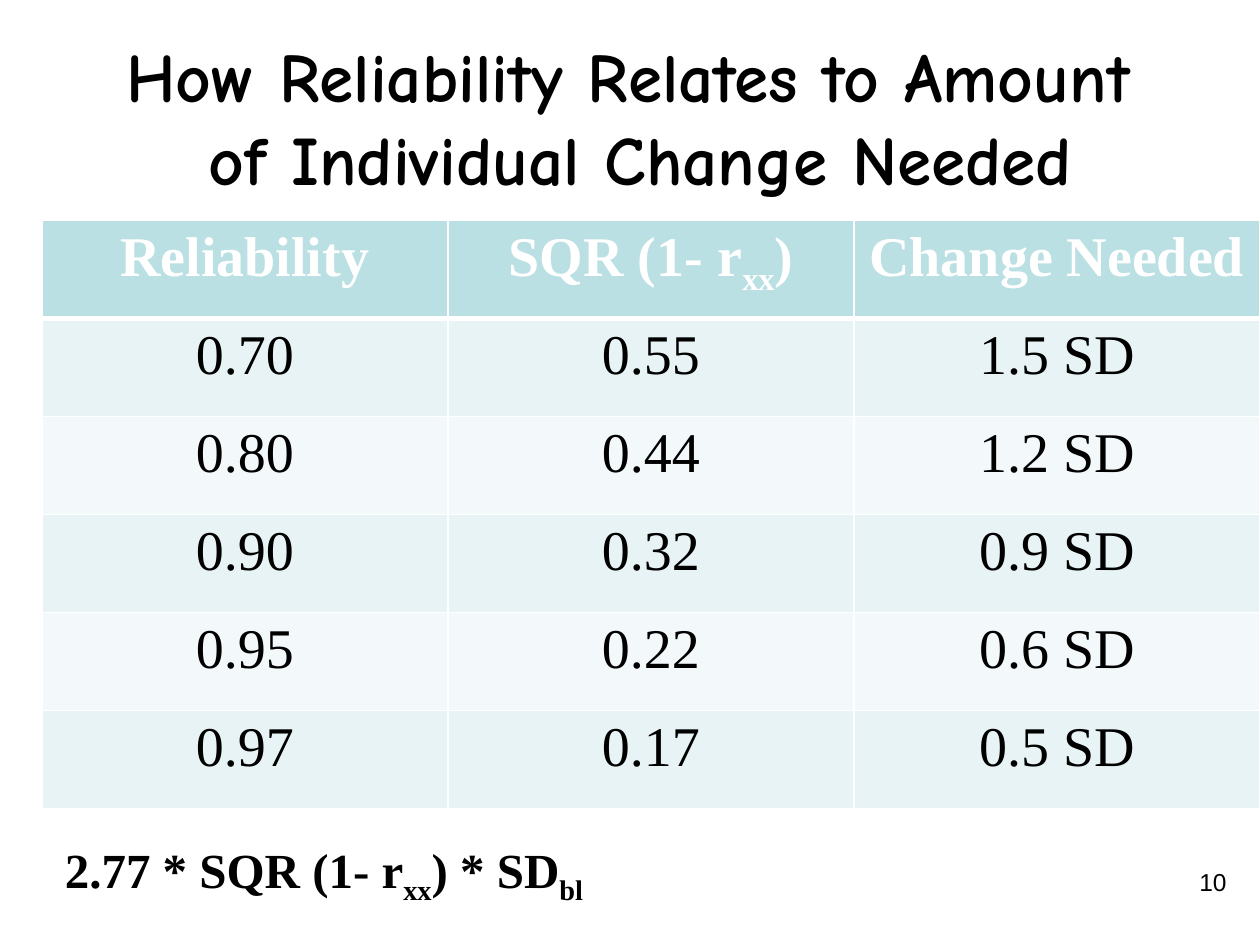
from lxml import etree
from pptx import Presentation
from pptx.dml.color import RGBColor
from pptx.enum.text import MSO_ANCHOR, MSO_AUTO_SIZE, PP_ALIGN
from pptx.oxml.ns import qn
from pptx.util import Pt

CENTER, RIGHT, LEFT = PP_ALIGN.CENTER, PP_ALIGN.RIGHT, PP_ALIGN.LEFT
MIDDLE = MSO_ANCHOR.MIDDLE
NO_FIT = MSO_AUTO_SIZE.NONE
COLORS = {
    "text": "000000",
    "white": "FFFFFF",
    "header": "BBE0E3",
    "odd": "E7F3F4",
    "even": "F3F9FA",
}
SERIF = "Times New Roman"


def write(para, text, size, font=SERIF, color="text", bold=False, align=CENTER):
    para.alignment = align
    for index, part in enumerate(text.split("_")):
        span = para.add_run()
        span.text = part
        span.font.size = Pt(size)
        span.font.name = font
        span.font.bold = bold
        span.font.color.rgb = RGBColor.from_string(COLORS[color])
        if index % 2:
            span.font._element.set("baseline", "-25000")


def add_border(cell, side, width):
    line = etree.SubElement(cell._tc.get_or_add_tcPr(), qn(f"a:ln{side}"), w=str(Pt(width)))
    fill = etree.SubElement(line, qn("a:solidFill"))
    etree.SubElement(fill, qn("a:srgbClr"), val=COLORS["white"])


deck = Presentation()
deck.slide_width, deck.slide_height = Pt(720), Pt(540)
page = deck.slides.add_slide(deck.slide_layouts[5])

title = page.shapes.title
title.left, title.top, title.width, title.height = Pt(12), Pt(21.6), Pt(708), Pt(90)
title.text_frame.auto_size = NO_FIT
title.text_frame.vertical_anchor = MIDDLE
heading = title.text_frame.paragraphs[0]
write(heading, "How Reliability Relates to Amount ", 39.6, font="Comic Neue", bold=True)
heading.add_line_break()
write(heading, "of Individual Change Needed", 39.6, font="Comic Neue", bold=True)

rows = [
    ("Reliability", "SQR (1- r_xx_)", "Change Needed"),
    ("0.70", "0.55", "1.5 SD"),
    ("0.80", "0.44", "1.2 SD"),
    ("0.90", "0.32", "0.9 SD"),
    ("0.95", "0.22", "0.6 SD"),
    ("0.97", "0.17", "0.5 SD"),
]
table = page.shapes.add_table(len(rows), 3, Pt(24), Pt(126), Pt(696), Pt(336)).table
for row_index, row in enumerate(rows):
    is_header = row_index == 0
    fill_name = "header" if is_header else "odd" if row_index % 2 else "even"
    for column_index, text in enumerate(row):
        cell = table.cell(row_index, column_index)
        for side in "LRTB":
            meets_header = (row_index, side) in ((0, "B"), (1, "T"))
            add_border(cell, side, 3 if meets_header else 1)
        cell.fill.solid()
        cell.fill.fore_color.rgb = RGBColor.from_string(COLORS[fill_name])
        write(cell.text_frame.paragraphs[0], text, 32,
              color="white" if is_header else "text", bold=is_header)

number = page.shapes.add_textbox(Pt(580.5), Pt(492), Pt(127.5), Pt(37.5))
number.text_frame.word_wrap = True
write(number.text_frame.paragraphs[0], "10", 14, font="Arial", align=RIGHT)

formula = page.shapes.add_textbox(Pt(30), Pt(476), Pt(378), Pt(41))
formula.text_frame.word_wrap = True
write(formula.text_frame.paragraphs[0], "2.77 * SQR (1- r_xx_) * SD_bl", 28,
      bold=True, align=LEFT)

deck.save("out.pptx")
